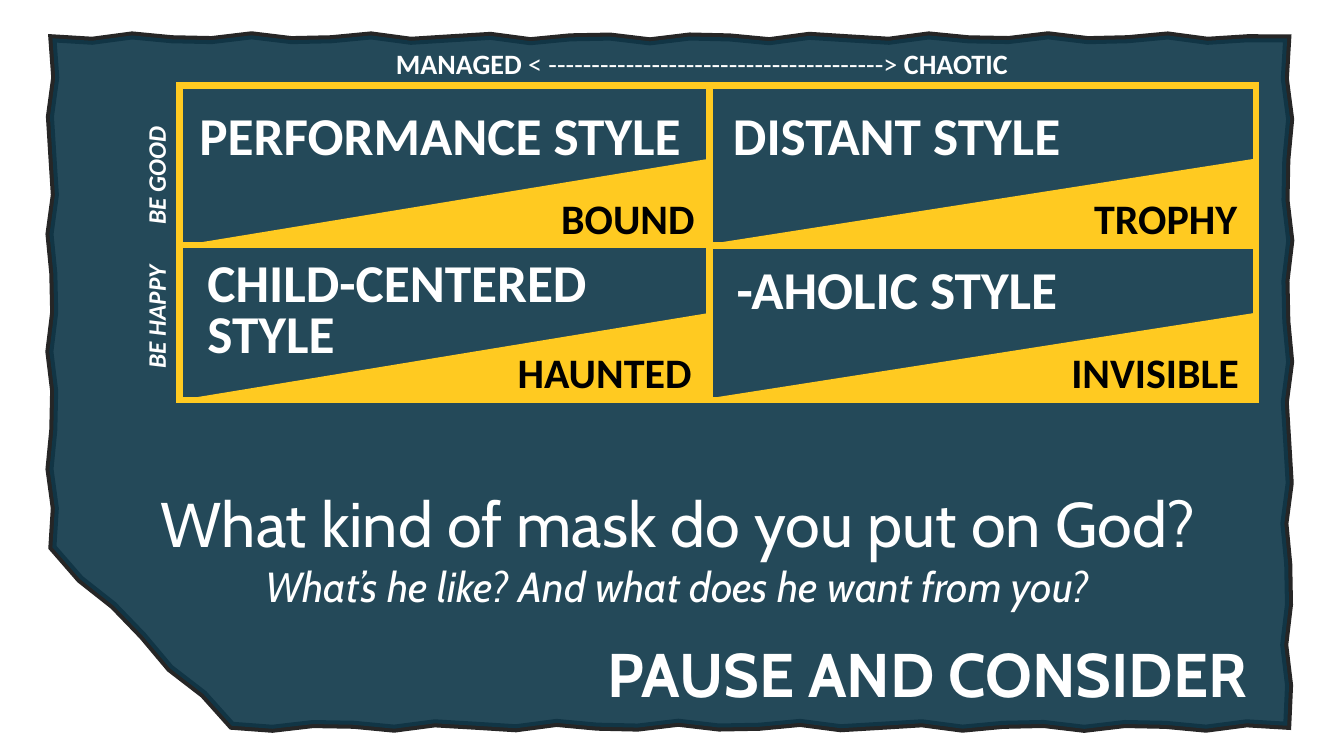
import copy
import math

import lxml.etree
import pptx
import pptx.dml.color
import pptx.enum.shapes
import pptx.enum.text
import pptx.oxml.ns
import pptx.util

COLORS = {"panel": "0F3749", "edge": "262626", "gold": "FFCA21", "white": "FFFFFF", "black": "000000"}
ALIGN = pptx.enum.text.PP_ALIGN
ANCHOR = pptx.enum.text.MSO_ANCHOR
SHAPE = pptx.enum.shapes.MSO_SHAPE
qn = pptx.oxml.ns.qn

STYLE = {"size": 38, "bold": True}
MASK = {"size": 30, "bold": True, "color": "black"}
AXIS = {"size": 20, "bold": True}
SIDE = {"size": 18, "bold": True, "italic": True}
TITLE = {"size": 44, "bold": True, "name": "Cabin"}
QUESTION = {"size": 45, "name": "Cabin"}
FOLLOW_UP = {"size": 30, "italic": True, "name": "Cabin"}

PANEL_CORNERS = [(3.9, 5.07), (95.78, 5.07), (95.78, 96), (17.25, 96), (3.9, 72.4)]
TRIANGLE_COLUMNS = [(13.5, 39.25, 11.47), (53.1, 40.25, 11.2)]
TRIANGLE_ROWS = [21, 41.4]
QUADRANTS = [
    (0, 0, "PERFORMANCE STYLE", (14.1, 12.93, 40, 9.87), 1, "BOUND", 52.43),
    (1, 0, "DISTANT STYLE", (53.8, 12.93, 34, 9.87), 1, "TROPHY", 92.8),
    (0, 1, "CHILD-CENTERED STYLE", (14.7, 34, 36.2, 15.2), 0.8, "HAUNTED", 52.2),
    (1, 1, "-AHOLIC STYLE", (54.08, 33.2, 34, 9.87), 1, "INVISIBLE", 92.93),
]


class Deck:
    """Draws styled elements on one slide, with lengths in percent of its size."""

    def __init__(self):
        self.prs = pptx.Presentation()
        self.prs.slide_width = pptx.util.Inches(13.33)
        self.prs.slide_height = pptx.util.Inches(7.5)
        self.s = self.prs.slides.add_slide(self.prs.slide_layouts[6])

    def x(self, share):
        return round(self.prs.slide_width * share / 100)

    def y(self, share):
        return round(self.prs.slide_height * share / 100)

    def box(self, left, top, width, height):
        return self.x(left), self.y(top), self.x(width), self.y(height)

    def rgb(self, name):
        return pptx.dml.color.RGBColor.from_string(COLORS[name])

    def paint(self, sp, fill=None, line=None, weight=0):
        sp.shadow.inherit = False
        if fill:
            sp.fill.solid()
            sp.fill.fore_color.rgb = self.rgb(fill)
        else:
            sp.fill.background()
        if line:
            sp.line.color.rgb = self.rgb(line)
            sp.line.width = pptx.util.Pt(weight)
            ln = sp.element.spPr.find(qn("a:ln"))
            lxml.etree.SubElement(ln, qn("a:miter")).set("lim", "800000")
        else:
            sp.line.fill.background()
        return sp

    def shape(self, kind, box, **paint):
        return self.paint(self.s.shapes.add_shape(kind, *self.box(*box)), **paint)

    def torn(self, corners, opacity, **paint):
        points = []
        step = pptx.util.Inches(0.4)
        swing = pptx.util.Inches(0.03)
        ends = [(self.x(a), self.y(b)) for a, b in corners]
        for (x0, y0), (x1, y1) in zip(ends, ends[1:] + ends[:1]):
            length = math.hypot(x1 - x0, y1 - y0)
            count = round(length / step)
            for i in range(count):
                t = i / count
                off = swing * math.sin(2.2 * i)
                points.append((round(x0 + (x1 - x0) * t - (y1 - y0) / length * off),
                               round(y0 + (y1 - y0) * t + (x1 - x0) / length * off)))
        fb = self.s.shapes.build_freeform(*points[0])
        fb.add_line_segments(points[1:], close=True)
        sp = self.paint(fb.convert_to_shape(), **paint)
        outline = next(sp.element.iter(qn("a:path")))
        body = copy.deepcopy(outline)
        outline.set("fill", "none")
        body.set("stroke", "0")
        outline.addnext(body)
        color = sp.element.spPr.find(qn("a:solidFill")).find(qn("a:srgbClr"))
        lxml.etree.SubElement(color, qn("a:alpha")).set("val", str(opacity * 1000))

    def text(self, box, runs, align=ALIGN.LEFT, spacing=1, anchor=ANCHOR.TOP, rotation=0, tab=None):
        sp = self.s.shapes.add_textbox(*self.box(*box))
        sp.rotation = rotation
        tf = sp.text_frame
        p = tf.paragraphs[0]
        if tab:
            tabs = lxml.etree.SubElement(p._p.get_or_add_pPr(), qn("a:tabLst"))
            stop = lxml.etree.SubElement(tabs, qn("a:tab"))
            stop.set("pos", str(self.x(tab)))
            stop.set("algn", "l")
        for target, values in ((tf, {"word_wrap": True, "vertical_anchor": anchor}),
                               (p, {"alignment": align, "line_spacing": spacing})):
            for key, value in values.items():
                setattr(target, key, value)
        for content, style in runs:
            r = p.add_run()
            r.text = content
            values = {"name": "Calibri", "color": "white", **style}
            r.font.color.rgb = self.rgb(values.pop("color"))
            values["size"] = pptx.util.Pt(values["size"])
            for key, value in values.items():
                setattr(r.font, key, value)


def main():
    d = Deck()
    d.torn(PANEL_CORNERS, 91, fill="panel", line="edge", weight=5.75)

    d.text((13.88, 5.47, 76.67, 5.87),
           [("MANAGED", AXIS), (" < " + "-" * 39 + "> ", {**AXIS, "bold": False}), ("CHAOTIC", AXIS)],
           align=ALIGN.CENTER)
    d.text((2.2, 30.5, 19.5, 4.4), [("BE HAPPY\tBE GOOD", SIDE)], spacing=0.7, rotation=270, tab=10.73)

    for frame in ((13.35, 11.33, 80.1, 41.6), (13.35, 11.33, 39.45, 21.1), (52.8, 32.5, 40.65, 20.43)):
        d.shape(SHAPE.RECTANGLE, frame, line="gold", weight=4.5)
    for col, row, style, box, spacing, mask, right in QUADRANTS:
        left, width, height = TRIANGLE_COLUMNS[col]
        top = TRIANGLE_ROWS[row]
        sp = d.shape(SHAPE.ISOSCELES_TRIANGLE, (left, top, width, height), fill="gold")
        sp.adjustments[0] = 1
        d.text(box, [(style, STYLE)], spacing=spacing)
        d.text((right - 18, top + 3.8, 18, 8.13), [(mask, MASK)], align=ALIGN.RIGHT)

    d.text((8.93, 63.47, 82.97, 28.13),
           [("What kind of mask do you put on God? ", QUESTION),
            ("What’s he like? And what does he want from you?", FOLLOW_UP)], align=ALIGN.CENTER)
    d.text((7.28, 80, 86.27, 19.33), [("PAUSE AND CONSIDER", TITLE)],
           align=ALIGN.RIGHT, spacing=0.9, anchor=ANCHOR.MIDDLE)
    d.prs.save("out.pptx")


if __name__ == "__main__":
    main()
